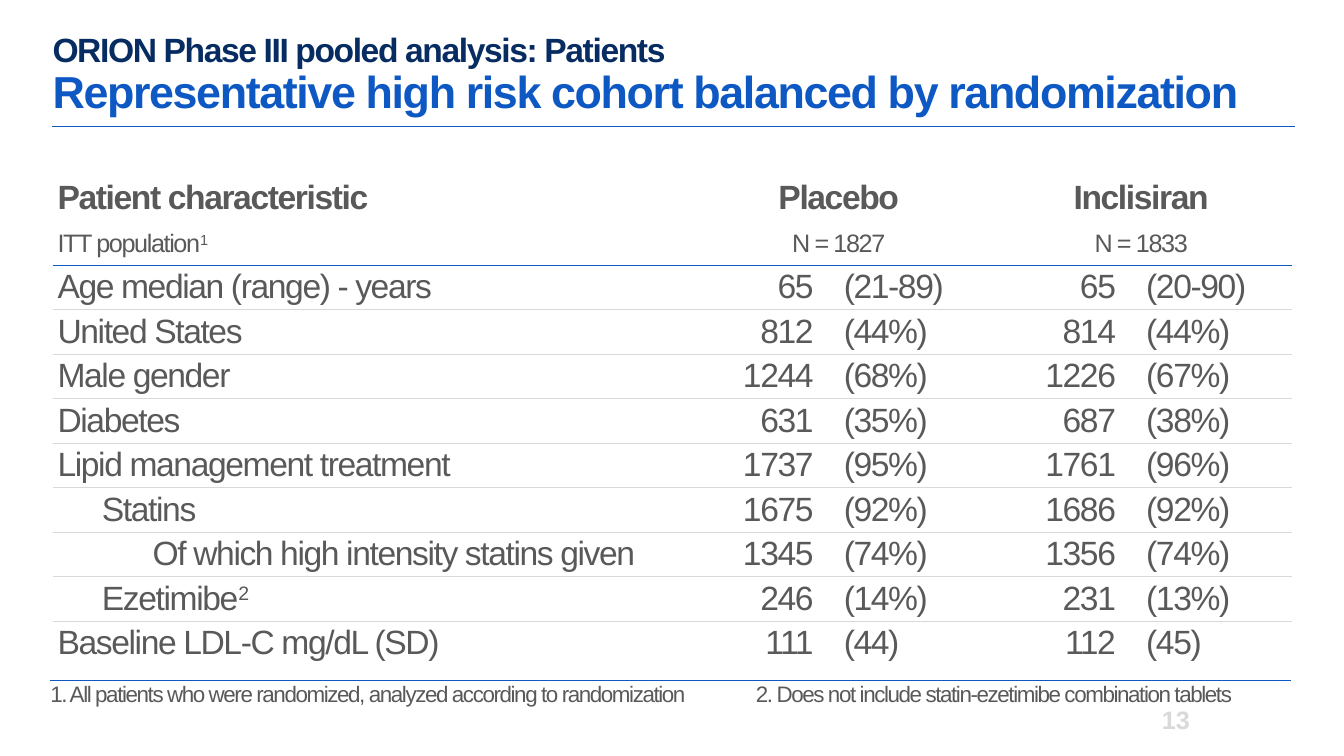
from dataclasses import dataclass

from lxml import etree
from pptx import Presentation
from pptx.dml.color import RGBColor
from pptx.enum.shapes import MSO_CONNECTOR
from pptx.enum.text import MSO_ANCHOR, PP_ALIGN
from pptx.oxml.ns import qn
from pptx.util import Pt

LEFT, CENTER, RIGHT = PP_ALIGN.LEFT, PP_ALIGN.CENTER, PP_ALIGN.RIGHT
TOP, MIDDLE, BOTTOM = MSO_ANCHOR.TOP, MSO_ANCHOR.MIDDLE, MSO_ANCHOR.BOTTOM
STRAIGHT = MSO_CONNECTOR.STRAIGHT

FONT = "Arial"
NAVY, BLUE, GREY, PALE = "072C62", "0E58C4", "595959", "D9D9D9"
NO_STYLE = "{2D5ABB26-0587-4C30-8999-92F81FD0307C}"
COLUMNS = [453.6, 108, 108, 108, 108]
HEADER_ROWS = [36, 28.8]
ROW_HEIGHT = 31.75


@dataclass
class Header:
    cells: tuple[str, str, str]
    size: float
    bold: bool = False
    sup: str = ""


@dataclass
class Row:
    label: str
    values: tuple[str, str, str, str]
    indent: float = 0
    sup: str = ""


HEADERS = [
    Header(("Patient characteristic", "Placebo", "Inclisiran"), 24, bold=True),
    Header(("ITT population", "N = 1827", "N = 1833"), 18, sup="1"),
]
ROWS = [
    Row("Age median (range) - years", ("65", "(21-89)", "65", "(20-90)")),
    Row("United States", ("812", "(44%)", "814", "(44%)")),
    Row("Male gender", ("1244", "(68%)", "1226", "(67%)")),
    Row("Diabetes", ("631", "(35%)", "687", "(38%)")),
    Row("Lipid management treatment", ("1737", "(95%)", "1761", "(96%)")),
    Row("Statins", ("1675", "(92%)", "1686", "(92%)"), indent=31.7),
    Row("Of which high intensity statins given", ("1345", "(74%)", "1356", "(74%)"), indent=68),
    Row("Ezetimibe", ("246", "(14%)", "231", "(13%)"), indent=31.7, sup="2"),
    Row("Baseline LDL-C mg/dL (SD)", ("111", "(44)", "112", "(45)")),
]


def rgb(color: str) -> RGBColor:
    return RGBColor.from_string(color)


def add_text(p, text: str, size: float = 24, color: str = GREY, bold: bool = False,
             spacing: float = -1, sup: bool = False) -> None:
    r = p.add_run()
    r.text = text
    r.font.name, r.font.size, r.font.bold = FONT, Pt(size), bold
    r.font.color.rgb = rgb(color)
    rpr = r.font._element
    if spacing:
        rpr.set("spc", str(int(spacing * 100)))
    if sup:
        rpr.set("baseline", "30000")


def add_box(s, left: float, top: float, width: float, height: float, anchor,
            margin_top: float = 0, margin_bottom: float = 0):
    tf = s.shapes.add_textbox(Pt(left), Pt(top), Pt(width), Pt(height)).text_frame
    tf.word_wrap, tf.vertical_anchor = True, anchor
    tf.margin_left = tf.margin_right = 0
    tf.margin_top, tf.margin_bottom = Pt(margin_top), Pt(margin_bottom)
    return tf.paragraphs[0]


def add_rule(s, left: float, right: float, y: float, width: float) -> None:
    line = s.shapes.add_connector(STRAIGHT, Pt(left), Pt(y), Pt(right), Pt(y))
    line.line.color.rgb, line.line.width = rgb(BLUE), Pt(width)
    etree.SubElement(line._element.spPr, qn("a:effectLst"))


def set_border(cell, side: str, color: str, width: float) -> None:
    tcpr = cell._tc.get_or_add_tcPr()
    ln = etree.Element(qn(f"a:{side}"), w=str(Pt(width)))
    fill = etree.SubElement(ln, qn("a:solidFill"))
    etree.SubElement(fill, qn("a:srgbClr"), val=color)
    tcpr.insert(len(tcpr.findall(qn("a:lnT"))), ln)


def format_cell(cell, align, anchor, pad: float, left: float = 3.6, right: float = 3.6):
    cell.fill.background()
    cell.vertical_anchor = anchor
    cell.margin_left, cell.margin_right = Pt(left), Pt(right)
    cell.margin_top = cell.margin_bottom = Pt(pad)
    p = cell.text_frame.paragraphs[0]
    p.alignment = align
    return p


def add_patient_table(s) -> None:
    heights = HEADER_ROWS + [ROW_HEIGHT] * len(ROWS)
    frame = s.shapes.add_table(len(heights), len(COLUMNS), Pt(37.5), Pt(124.5),
                               Pt(sum(COLUMNS)), Pt(sum(heights)))
    table = frame.table
    table.first_row = table.horz_banding = False
    table._tbl.tblPr.find(qn("a:tableStyleId")).text = NO_STYLE
    for column, width in zip(table.columns, COLUMNS):
        column.width = Pt(width)
    for row, height in zip(table.rows, heights):
        row.height = Pt(height)

    # Header rows, with each group name over two columns
    for i, header in enumerate(HEADERS):
        for j, text in zip((0, 1, 3), header.cells):
            cell = table.cell(i, j)
            if j:
                cell.merge(table.cell(i, j + 1))
            p = format_cell(cell, CENTER if j else LEFT, TOP, 3.6)
            add_text(p, text, size=header.size, bold=header.bold)
            if header.sup and j == 0:
                add_text(p, header.sup, size=header.size, sup=True)

    # Patient rows: counts align right, brackets align left
    for i, row in enumerate(ROWS, len(HEADERS)):
        for j, text in enumerate((row.label, *row.values)):
            is_count = j in (1, 3)
            p = format_cell(table.cell(i, j), RIGHT if is_count else LEFT, MIDDLE, 0,
                            left=3.6 if j else 3.6 + row.indent,
                            right=18 if is_count else 3.6)
            add_text(p, text)
            if row.sup and j == 0:
                add_text(p, row.sup, sup=True)

    # Row borders
    first, last = len(HEADERS), len(heights) - 1
    for i in range(first, last + 1):
        for j in range(len(COLUMNS)):
            style = (BLUE, 1) if i == first else (PALE, 0.25)
            set_border(table.cell(i, j), "lnT", *style)
            set_border(table.cell(i - 1, j), "lnB", *style)


def main() -> None:
    prs = Presentation()
    prs.slide_width, prs.slide_height = Pt(960), Pt(540)
    s = prs.slides.add_slide(prs.slide_layouts[6])

    # Rules under the title and above the footnotes
    add_rule(s, 37.5, 925, 90.2, 0.75)
    add_rule(s, 36, 922.5, 486, 0.25)

    # Title
    p = add_box(s, 37.5, 18, 885, 73.5, BOTTOM, margin_bottom=7.2)
    p.line_spacing = 0.9
    add_text(p, "ORION Phase III pooled analysis: Patients", color=NAVY, bold=True)
    p.add_line_break()
    add_text(p, "Representative high risk cohort balanced by randomization",
             size=32, color=BLUE, bold=True)

    add_patient_table(s)

    # Footnotes, the second at a tab stop
    p = add_box(s, 36, 484, 885.5, 22.2, BOTTOM, margin_top=1.4, margin_bottom=1.4)
    tabs = etree.SubElement(p._p.get_or_add_pPr(), qn("a:tabLst"))
    etree.SubElement(tabs, qn("a:tab"), pos=str(Pt(504)), algn="l")
    add_text(p, "1. All patients who were randomized, analyzed according to randomization"
                "\t2. Does not include statin-ezetimibe combination tablets", size=16)

    # Slide number
    p = add_box(s, 814, 487.5, 36, 53, MIDDLE)
    p.alignment = RIGHT
    add_text(p, "13", size=18, color=PALE, bold=True, spacing=0)

    prs.save("out.pptx")


if __name__ == "__main__":
    main()
